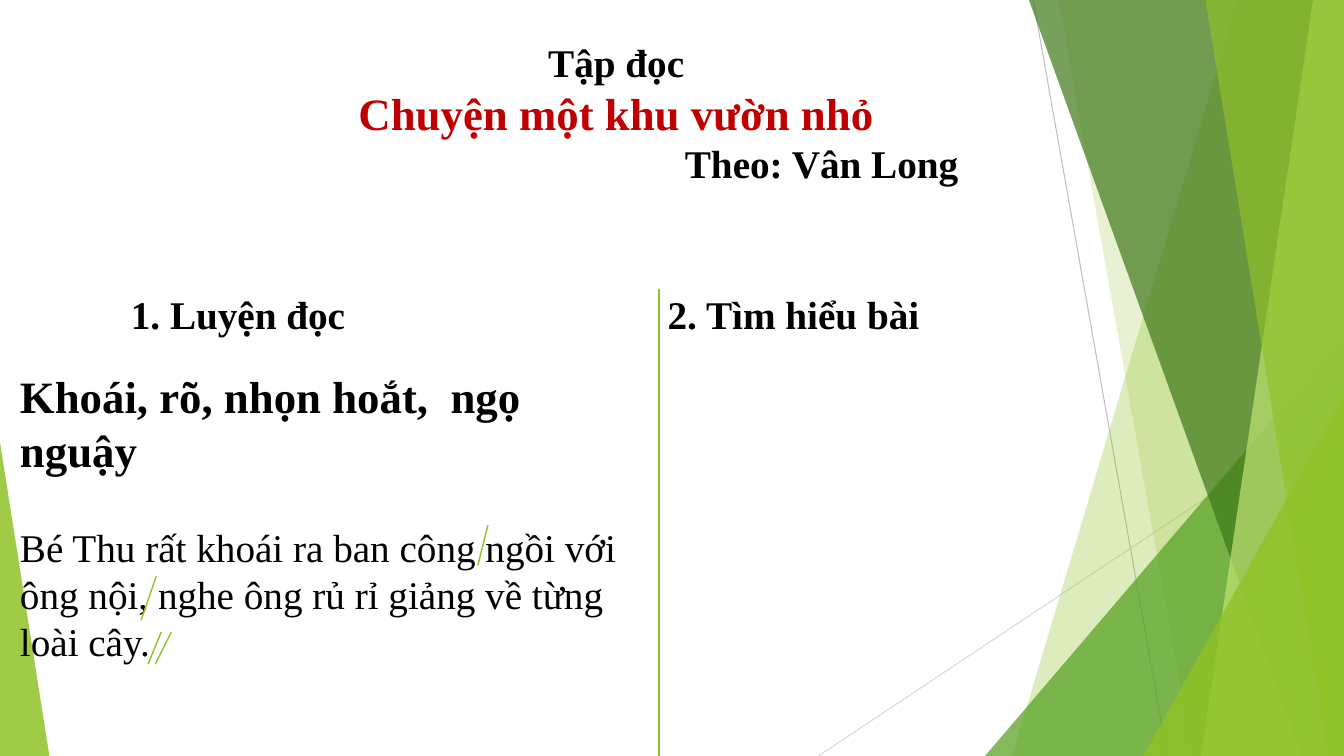
from lxml import etree
from pptx import Presentation
from pptx.dml.color import RGBColor
from pptx.enum.shapes import MSO_CONNECTOR, MSO_SHAPE
from pptx.enum.text import MSO_ANCHOR, MSO_AUTO_SIZE, PP_ALIGN
from pptx.oxml.ns import qn
from pptx.util import Pt

STRAIGHT = MSO_CONNECTOR.STRAIGHT
TRIANGLE = MSO_SHAPE.ISOSCELES_TRIANGLE
TOP = MSO_ANCHOR.TOP
NO_AUTOFIT = MSO_AUTO_SIZE.NONE
LEFT, CENTER = PP_ALIGN.LEFT, PP_ALIGN.CENTER

WIDTH, HEIGHT = 960, 540
FONT = "Times New Roman"
COLORS = {
    "black": "000000", "red": "C00000", "lime": "90C226",
    "green": "54A021", "forest": "3F7819", "pale": "C0E474",
    "gray": "BFBFBF", "light gray": "D9D9D9",
}


def color_of(name):
    return RGBColor.from_string(COLORS[name])


def add_line(page, start, end, color="lime", weight=1):
    line = page.shapes.add_connector(STRAIGHT, *(Pt(v) for v in (*start, *end)))
    line.line.color.rgb = color_of(color)
    line.line.width = Pt(weight)
    etree.SubElement(line.element.spPr, qn("a:effectLst"))


def paint(shape, color, opacity):
    """Fill a shape with a partly transparent colour."""
    shape.shadow.inherit = False
    shape.line.fill.background()
    shape.fill.solid()
    shape.fill.fore_color.rgb = color_of(color)
    tint = shape.element.spPr.find(qn("a:solidFill"))[0]
    etree.SubElement(tint, qn("a:alpha"), val=str(opacity * 1000))


def add_band(page, box, top_x, bottom_x, color, opacity):
    """Fill from a slanted left edge to the right side of the box."""
    left, top, width, height = box
    right, bottom = left + width, top + height
    builder = page.shapes.build_freeform(left + top_x, top, scale=Pt(1))
    builder.add_line_segments(
        [(right, top), (right, bottom), (left + bottom_x, bottom)], close=True)
    paint(builder.convert_to_shape(), color, opacity)


def add_corner(page, box, apex, color, opacity):
    corner = page.shapes.add_shape(TRIANGLE, *(Pt(v) for v in box))
    corner.adjustments[0] = apex
    paint(corner, color, opacity)


def add_right_corner(page, box, width, height, color, opacity):
    left, top, box_width, box_height = box
    corner_box = (left + box_width - width, top + box_height - height, width, height)
    add_corner(page, corner_box, 1, color, opacity)


def write(para, text, size=28, bold=True, color="black", align=LEFT, indent=0):
    para.alignment = align
    para.line_spacing = 1.0
    if indent:
        para._p.get_or_add_pPr().set("marL", str(Pt(indent)))
        para._p.get_or_add_pPr().set("indent", "0")
    span = para.add_run()
    span.text = text
    span.font.name = FONT
    span.font.size = Pt(size)
    span.font.bold = bold
    span.font.color.rgb = color_of(color)


def add_text(page, box, text, **style):
    frame = page.shapes.add_textbox(*(Pt(v) for v in box)).text_frame
    frame.word_wrap = True
    write(frame.paragraphs[0], text, **style)


def draw_facets(page, box):
    """Thin rays and overlapping green facets on the right."""
    left, top, width, height = box
    right, bottom = left + width, top + height
    add_line(page, (left + 153.4, top), (left + 249.2, bottom), "gray", 0.75)
    add_line(page, (right, top + 290.2), (left, bottom), "light gray", 0.75)
    add_band(page, box, 299.6, 138.3, "lime", 30)
    add_band(page, box, 171.4, 267.2, "lime", 20)
    add_right_corner(page, box, 256.4, 300.2, "green", 72)
    add_band(page, box, 150.5, 344.9, "forest", 70)
    add_band(page, box, 353.6, 273.6, "pale", 70)
    add_band(page, box, 276.5, 364.4, "lime", 65)
    add_right_corner(page, box, 143.4, 257, "lime", 80)


def fill_title(page, box):
    """Subject, story name and author."""
    title = page.shapes.title
    title.left, title.top, title.width, title.height = (Pt(v) for v in box)
    title.element.getparent().append(title.element)
    frame = title.text_frame
    frame.vertical_anchor = TOP
    frame.auto_size = NO_AUTOFIT
    frame.word_wrap = True
    write(frame.paragraphs[0], "Tập đọc", align=CENTER)
    write(frame.add_paragraph(), "Chuyện một khu vườn nhỏ",
          size=32, color="red", align=CENTER)
    write(frame.add_paragraph(), "Theo: Vân Long", indent=359)


def draw_lesson(page, box):
    """Two columns: reading practice and comprehension."""
    left, top, width, height = box
    middle = left + 463.6
    add_text(page, (left + 79.2, top, 300, 41), "1. Luyện đọc")
    add_text(page, (middle - 1, top, 300, 41), "2. Tìm hiểu bài")
    add_line(page, (middle, top + 2.9), (middle, top + height))
    add_text(page, (left, top + 56.2, 463, 68),
             "Khoái, rõ, nhọn hoắt,  ngọ nguậy", size=32)
    add_text(page, (left, top + 166.3, 463, 109),
             "Bé Thu rất khoái ra ban công ngồi với ông nội, "
             "nghe ông rủ rỉ giảng về từng loài cây.", bold=False)

    # Pause marks: right end, top, slant, height
    pauses = [(104.4, 208, 10.8, 31), (341.3, 171.3, 7.2, 28.8),
              (115.2, 247.6, 11.5, 23), (108, 247.6, 9.4, 23)]
    for x, y, slant, rise in pauses:
        add_line(page, (left + x, top + y), (left + x - slant, top + y + rise))


def main():
    deck = Presentation()
    deck.slide_width, deck.slide_height = Pt(WIDTH), Pt(HEIGHT)
    page = deck.slides.add_slide(deck.slide_layouts[5])
    draw_facets(page, (584.6, 0, WIDTH - 584.6, HEIGHT))
    add_corner(page, (0, 316, 35.3, HEIGHT - 316), 0, "lime", 85)
    fill_title(page, (123, 23.8, 634.3, 113.8))
    draw_lesson(page, (7.2, 203.8, 800, HEIGHT - 203.8))
    deck.save("out.pptx")


if __name__ == "__main__":
    main()
